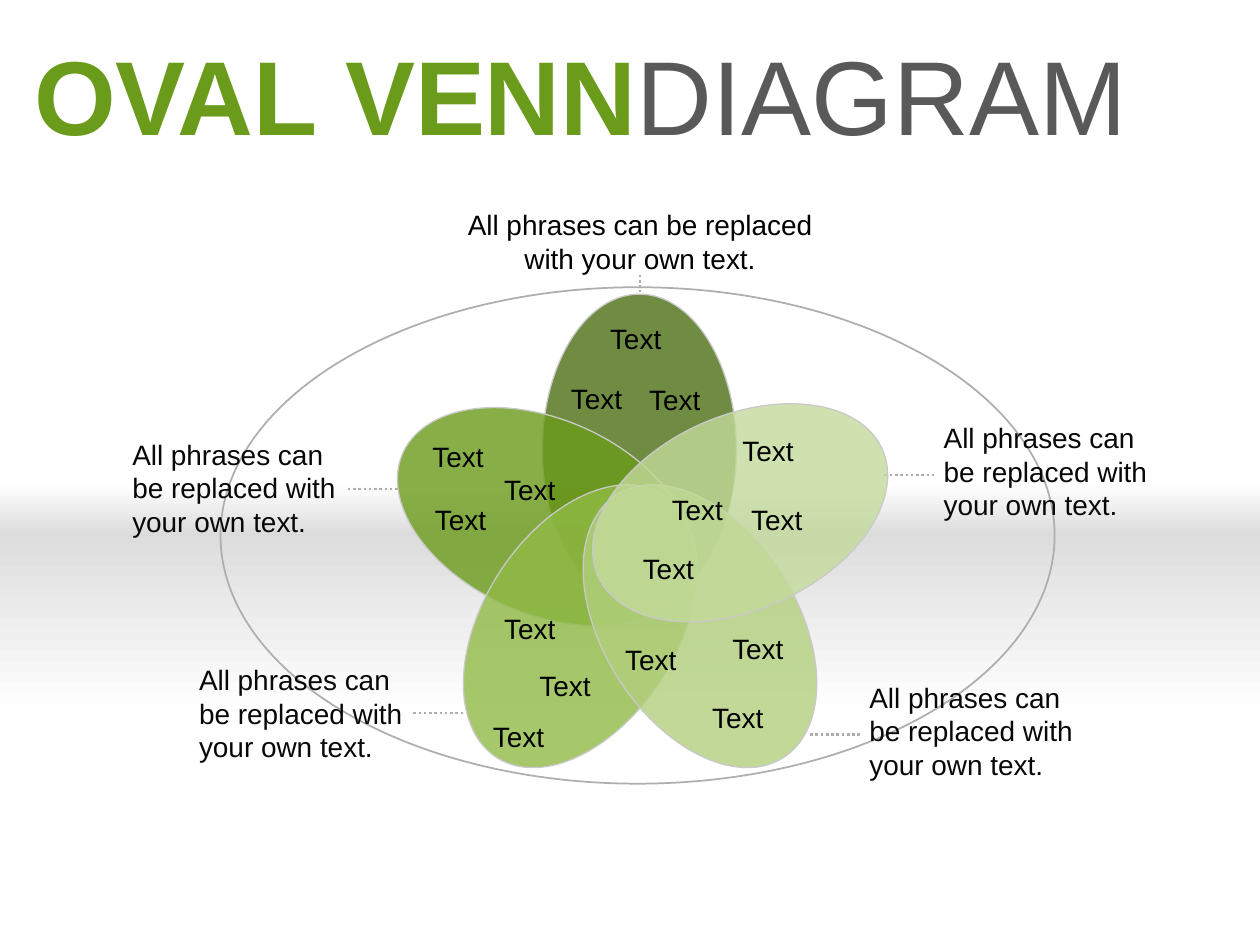
from typing import NamedTuple

from lxml import etree
from pptx import Presentation
from pptx.dml.color import RGBColor
from pptx.enum.dml import MSO_LINE
from pptx.enum.shapes import MSO_CONNECTOR, MSO_SHAPE
from pptx.enum.text import MSO_ANCHOR, PP_ALIGN
from pptx.oxml.ns import qn
from pptx.util import Inches, Pt

OVAL, RECTANGLE = MSO_SHAPE.OVAL, MSO_SHAPE.RECTANGLE
STRAIGHT = MSO_CONNECTOR.STRAIGHT
DOTTED = MSO_LINE.ROUND_DOT
LEFT, CENTER = PP_ALIGN.LEFT, PP_ALIGN.CENTER
TOP = MSO_ANCHOR.TOP
TITLE_ONLY = 5
FONT = "Arial"
PHRASE = "All phrases can be replaced with your own text."
COLORS = {
    "green": "6B9B1A", "title_gray": "595959", "guide": "AEAEAE",
    "petal_edge": "C9C9C9", "band": "DDDDDD", "band_top": "DBDBDB",
    "white": "FFFFFF", "text": "000000", "note": "080808",
    "petal_top": "4C7013", "petal_bottom_left": "90BA45",
    "petal_bottom_right": "B2CF7D", "petal_right": "C3DA9A",
}


class Band(NamedTuple):
    top: float
    height: float
    color: str
    angle: float


class Petal(NamedTuple):
    left: float
    top: float
    rotation: float
    color: str


class Callout(NamedTuple):
    left: float
    top: float
    width: float
    height: float
    line: tuple[float, float, float, float]
    color: str = "note"
    align: PP_ALIGN = LEFT


BANDS = [Band(4.24, 1.42, "band", 270), Band(3.83, 0.43, "band_top", 90)]
PETALS = [
    Petal(3.84, 2.8, 90, "petal_top"),
    Petal(3.09, 3.33, 24.1, "green"),
    Petal(3.37, 4.2, 302.3, "petal_bottom_left"),
    Petal(4.32, 4.2, 57.7, "petal_bottom_right"),
    Petal(4.64, 3.3, 335.9, "petal_right"),
]
CALLOUTS = [
    Callout(6.9, 5.4, 1.77, 0.8, (6.43, 5.83, 6.83, 5.83)),
    Callout(1.05, 3.47, 1.77, 0.8, (2.76, 3.88, 3.16, 3.88)),
    Callout(1.58, 5.26, 1.77, 0.8, (3.28, 5.66, 3.69, 5.66)),
    Callout(7.49, 3.34, 1.77, 0.8, (7.02, 3.77, 7.42, 3.77)),
    Callout(3.59, 1.65, 2.98, 0.53, (5.08, 2.18, 5.08, 2.32), "text", CENTER),
]
LABEL_SIZE = (0.45, 0.27)
LABELS = [
    (4.82, 2.55), (5.13, 3.04), (4.51, 3.03),
    (3.43, 3.99), (3.41, 3.49), (3.98, 3.75),
    (3.98, 4.85), (4.26, 5.31), (3.89, 5.71),
    (5.63, 5.56), (5.79, 5.01), (4.94, 5.1),
    (5.87, 3.44), (5.94, 3.99), (5.31, 3.91), (5.08, 4.38),
]


def rgb(name: str) -> RGBColor:
    return RGBColor.from_string(COLORS[name])


def add_shape(slide, kind, left: float, top: float, width: float, height: float):
    sp = slide.shapes.add_shape(
        kind, Inches(left), Inches(top), Inches(width), Inches(height))
    sp.shadow.inherit = False
    return sp


def add_band(slide, band: Band) -> None:
    """Full-width strip fading to white; angle is counter-clockwise."""
    sp = add_shape(slide, RECTANGLE, 0, band.top, 10, band.height)
    sp.line.fill.background()
    sp.fill.gradient()
    sp.fill.gradient_angle = band.angle
    for stop, color in zip(sp.fill.gradient_stops, (band.color, "white")):
        stop.color.rgb = rgb(color)


def add_outer_oval(slide) -> None:
    sp = add_shape(slide, OVAL, 1.75, 2.28, 6.62, 3.94)
    sp.fill.background()
    sp.line.color.rgb = rgb("guide")
    sp.line.width = Pt(1)


def add_petal(slide, petal: Petal) -> None:
    sp = add_shape(slide, OVAL, petal.left, petal.top, 2.47, 1.54)
    sp.rotation = petal.rotation
    sp.fill.solid()
    sp.fill.fore_color.rgb = rgb(petal.color)
    color = sp.fill._xPr.find(qn("a:solidFill"))[0]
    etree.SubElement(color, qn("a:alpha"), val="80000")
    sp.line.color.rgb = rgb("petal_edge")
    sp.line.width = Pt(0.75)


def add_text(slide, text: str, left: float, top: float, width: float,
             height: float, color: str, align: PP_ALIGN) -> None:
    s = slide.shapes.add_textbox(
        Inches(left), Inches(top), Inches(width), Inches(height))
    tf = s.text_frame
    tf.word_wrap = True
    tf.margin_left = tf.margin_right = tf.margin_top = tf.margin_bottom = 0
    tf.text = text
    p = tf.paragraphs[0]
    p.alignment = align
    font = p.runs[0].font
    font.name, font.size = FONT, Pt(16)
    font.color.rgb = rgb(color)


def add_dotted_line(slide, x1: float, y1: float, x2: float, y2: float) -> None:
    s = slide.shapes.add_connector(
        STRAIGHT, Inches(x1), Inches(y1), Inches(x2), Inches(y2))
    s.line.color.rgb = rgb("guide")
    s.line.width = Pt(1.5)
    s.line.dash_style = DOTTED
    etree.SubElement(s._element.spPr, qn("a:effectLst"))


def set_title(slide) -> None:
    title = slide.shapes.title
    title.left, title.top = Inches(0.17), Inches(0.19)
    title.width, title.height = Inches(9.83), Inches(1.1)
    tf = title.text_frame
    tf.vertical_anchor = TOP
    p = tf.paragraphs[0]
    p.alignment = LEFT
    for text, color, bold in (("OVAL VENN", "green", True),
                              ("DIAGRAM", "title_gray", False)):
        r = p.add_run()
        r.text = text
        r.font.name, r.font.size, r.font.bold = FONT, Pt(60), bold
        r.font.color.rgb = rgb(color)


def main() -> None:
    prs = Presentation()
    prs.slide_width, prs.slide_height = Inches(10), Inches(7.5)
    slide = prs.slides.add_slide(prs.slide_layouts[TITLE_ONLY])
    set_title(slide)
    for band in BANDS:
        add_band(slide, band)
    add_outer_oval(slide)
    for c in CALLOUTS:
        add_text(slide, PHRASE, c.left, c.top, c.width, c.height,
                 c.color, c.align)
        add_dotted_line(slide, *c.line)
    for petal in PETALS:
        add_petal(slide, petal)
    for left, top in LABELS:
        add_text(slide, "Text", left, top, *LABEL_SIZE, "text", CENTER)
    prs.save("out.pptx")


if __name__ == "__main__":
    main()
